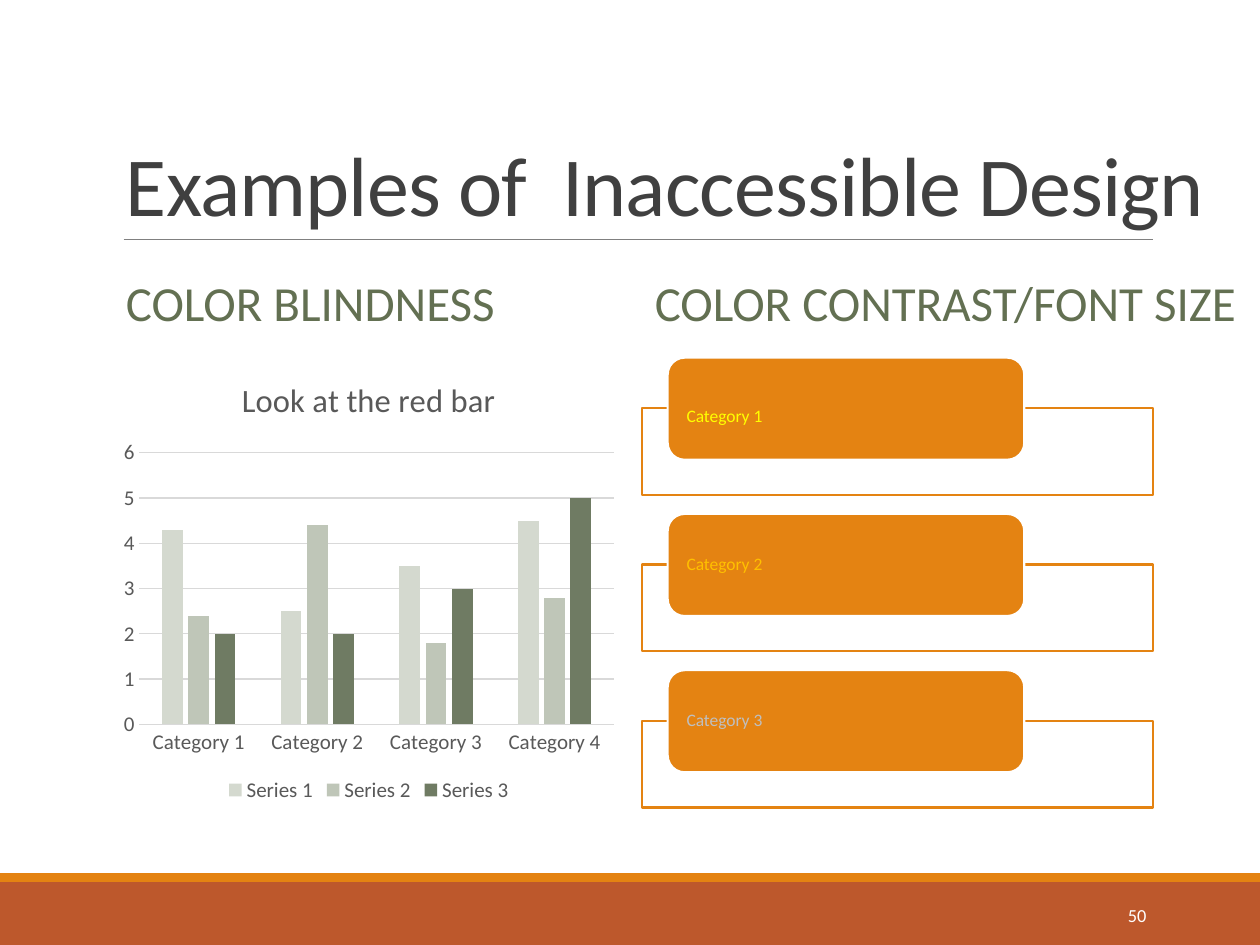
from lxml.etree import SubElement
from pptx import Presentation
from pptx.chart.data import CategoryChartData
from pptx.dml.color import RGBColor
from pptx.enum.chart import XL_CHART_TYPE, XL_LEGEND_POSITION, XL_TICK_MARK
from pptx.enum.shapes import MSO_CONNECTOR, MSO_SHAPE
from pptx.enum.text import MSO_ANCHOR, PP_ALIGN
from pptx.oxml.ns import qn
from pptx.util import Cm, Pt

FONT = "Calibri"
WHITE = RGBColor(0xFF, 0xFF, 0xFF)
RUST = RGBColor(0xBD, 0x58, 0x2C)
ORANGE = RGBColor(0xE4, 0x83, 0x12)
RULE_GRAY = RGBColor(0x80, 0x80, 0x80)
TITLE_GRAY = RGBColor(0x40, 0x40, 0x40)
CHART_GRAY = RGBColor(0x59, 0x59, 0x59)
GRID_GRAY = RGBColor(0xD9, 0xD9, 0xD9)
HEADING_GREEN = RGBColor(0x63, 0x70, 0x52)
YELLOW = RGBColor(0xFF, 0xFF, 0x00)
GOLD = RGBColor(0xFF, 0xC0, 0x00)
SILVER = RGBColor(0xBF, 0xBF, 0xBF)

LEFT_COLUMN, RIGHT_COLUMN, COLUMN_WIDTH = 2.29, 12.95, 10.29
CARD_TOP, CARD_PITCH = 7.21, 3.15
CARDS = [("Category 1", YELLOW), ("Category 2", GOLD), ("Category 3", SILVER)]

CATEGORIES = ["Category 1", "Category 2", "Category 3", "Category 4"]
SERIES = [
    ("Series 1", (4.3, 2.5, 3.5, 4.5), RGBColor(0xD4, 0xD9, 0xCF)),
    ("Series 2", (2.4, 4.4, 1.8, 2.8), RGBColor(0xBF, 0xC6, 0xB8)),
    ("Series 3", (2, 2, 3, 5), RGBColor(0x6F, 0x7B, 0x63)),
]


def set_attributes(target, values):
    for name, value in values.items():
        setattr(target, name, value)


def set_font(font, size, color):
    set_attributes(font, {"name": FONT, "size": Pt(size), "bold": False})
    font.color.rgb = color


def add_box(slide, kind, bounds, fill, line=None):
    shape = slide.shapes.add_shape(kind, *map(Cm, bounds))
    shape.shadow.inherit = False
    shape.fill.solid()
    shape.fill.fore_color.rgb = fill
    if line is None:
        shape.line.fill.background()
    else:
        shape.line.color.rgb = line
        shape.line.width = Pt(1.25)
    return shape


def add_run(paragraph, text, size, color):
    run = paragraph.add_run()
    run.text = text
    set_font(run.font, size, color)
    return run


def add_text(slide, bounds, text, size, color, paragraph_format,
             anchor=MSO_ANCHOR.MIDDLE):
    frame = slide.shapes.add_textbox(*map(Cm, bounds)).text_frame
    set_attributes(frame, {"word_wrap": True, "vertical_anchor": anchor})
    paragraph = frame.paragraphs[0]
    set_attributes(paragraph, paragraph_format)
    return add_run(paragraph, text, size, color)


def add_rule(slide, left, right, top):
    rule = slide.shapes.add_connector(
        MSO_CONNECTOR.STRAIGHT, Cm(left), Cm(top), Cm(right), Cm(top))
    rule.line.color.rgb = RULE_GRAY
    rule.line.width = Pt(0.5)
    SubElement(rule._element.spPr, qn("a:effectLst"))


def add_card(slide, top, label, color):
    """Draw an outlined panel with a rounded label overlapping its top edge."""
    panel = add_box(slide, MSO_SHAPE.RECTANGLE,
                    (RIGHT_COLUMN, top + 1.02, COLUMN_WIDTH, 1.75), WHITE, ORANGE)
    panel_color = panel.fill._xPr.find(qn("a:solidFill"))[0]
    SubElement(panel_color, qn("a:alpha"), val="90000")

    tab = add_box(slide, MSO_SHAPE.ROUNDED_RECTANGLE,
                  (RIGHT_COLUMN + 0.51, top, 7.19, 2.06), ORANGE, WHITE)
    set_attributes(tab.text_frame, {
        "word_wrap": True, "vertical_anchor": MSO_ANCHOR.MIDDLE,
        "margin_left": Cm(0.28), "margin_right": Cm(0.28),
        "margin_top": 0, "margin_bottom": 0})
    paragraph = tab.text_frame.paragraphs[0]
    set_attributes(paragraph, {"alignment": PP_ALIGN.LEFT, "line_spacing": 0.9})
    add_run(paragraph, label, 10, color)
    return paragraph


def add_column_chart(slide, bounds):
    data = CategoryChartData()
    data.categories = CATEGORIES
    for name, values, _ in SERIES:
        data.add_series(name, values)
    chart = slide.shapes.add_chart(
        XL_CHART_TYPE.COLUMN_CLUSTERED, *map(Cm, bounds), data).chart
    set_font(chart.font, 12, CHART_GRAY)

    chart.has_title = True
    title = chart.chart_title
    title.include_in_layout = False
    add_run(title.text_frame.paragraphs[0], "Look at the red bar", 18.6, CHART_GRAY)

    chart.has_legend = True
    set_attributes(chart.legend, {
        "position": XL_LEGEND_POSITION.BOTTOM, "include_in_layout": False})
    set_font(chart.legend.font, 12, CHART_GRAY)

    for axis in (chart.category_axis, chart.value_axis):
        set_attributes(axis, {"major_tick_mark": XL_TICK_MARK.NONE,
                              "minor_tick_mark": XL_TICK_MARK.NONE})
        set_font(axis.tick_labels.font, 12, CHART_GRAY)
    set_attributes(chart.value_axis, {
        "minimum_scale": 0, "maximum_scale": 6, "major_unit": 1})
    chart.value_axis.format.line.fill.background()
    for line in (chart.category_axis.format.line,
                 chart.value_axis.major_gridlines.format.line):
        line.color.rgb = GRID_GRAY
        line.width = Pt(0.75)

    plot = chart.plots[0]
    set_attributes(plot, {"gap_width": 219, "overlap": -27,
                          "vary_by_categories": False})
    for series, (_, _, color) in zip(plot.series, SERIES):
        series.format.fill.solid()
        series.format.fill.fore_color.rgb = color


def main():
    presentation = Presentation()
    set_attributes(presentation, {"slide_width": Cm(25.4), "slide_height": Cm(19.05)})
    slide = presentation.slides.add_slide(presentation.slide_layouts[6])

    add_box(slide, MSO_SHAPE.RECTANGLE, (0, 17.78, 25.4, 1.27), RUST)
    add_box(slide, MSO_SHAPE.RECTANGLE, (0, 17.6, 25.4, 0.18), ORANGE)
    add_rule(slide, 2.49, 23.24, 4.83)

    title = add_text(slide, (LEFT_COLUMN, 0.79, 22.91, 4.04),
                     "Examples of  Inaccessible Design", 48, TITLE_GRAY,
                     {"line_spacing": 0.85}, MSO_ANCHOR.BOTTOM)
    title.font._element.set("spc", "-50")

    heading_format = {"line_spacing": 0.9, "space_before": Pt(12), "space_after": Pt(2)}
    for left, width, text in (
            (LEFT_COLUMN, COLUMN_WIDTH, "COLOR BLINDNESS"),
            (RIGHT_COLUMN, 12.45, "COLOR CONTRAST/FONT SIZE")):
        add_text(slide, (left, 5.13, width, 2.06), text, 28, HEADING_GREEN,
                 heading_format)

    add_column_chart(slide, (LEFT_COLUMN, 7.16, COLUMN_WIDTH, 9.12))

    labels = [add_card(slide, CARD_TOP + index * CARD_PITCH, label, color)
              for index, (label, color) in enumerate(CARDS)]
    add_run(labels[0], "\t", 25, WHITE)

    add_text(slide, (20.62, 17.93, 2.74, 1.02), "50", 10.5, WHITE,
             {"alignment": PP_ALIGN.RIGHT})
    presentation.save("out.pptx")


if __name__ == "__main__":
    main()
